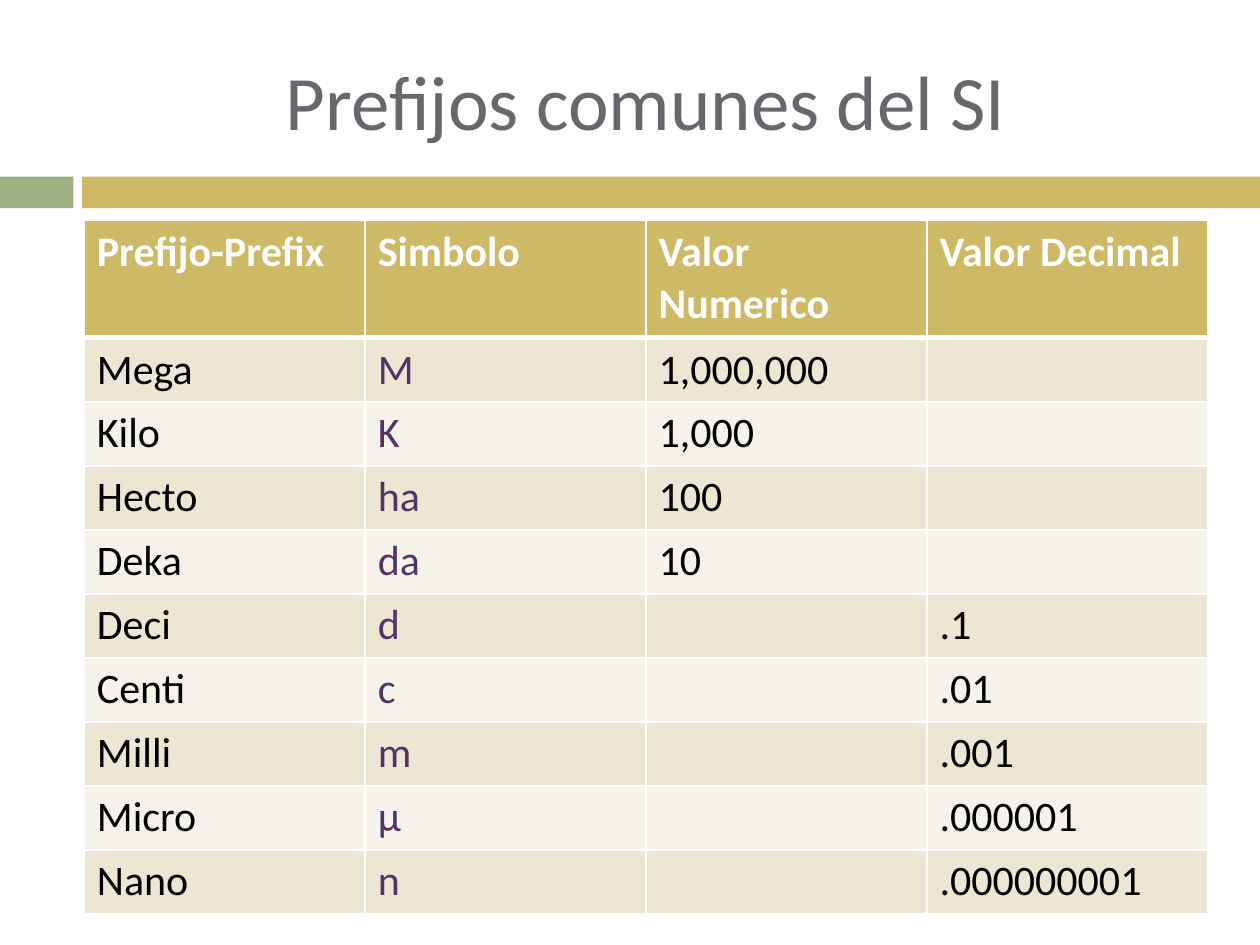
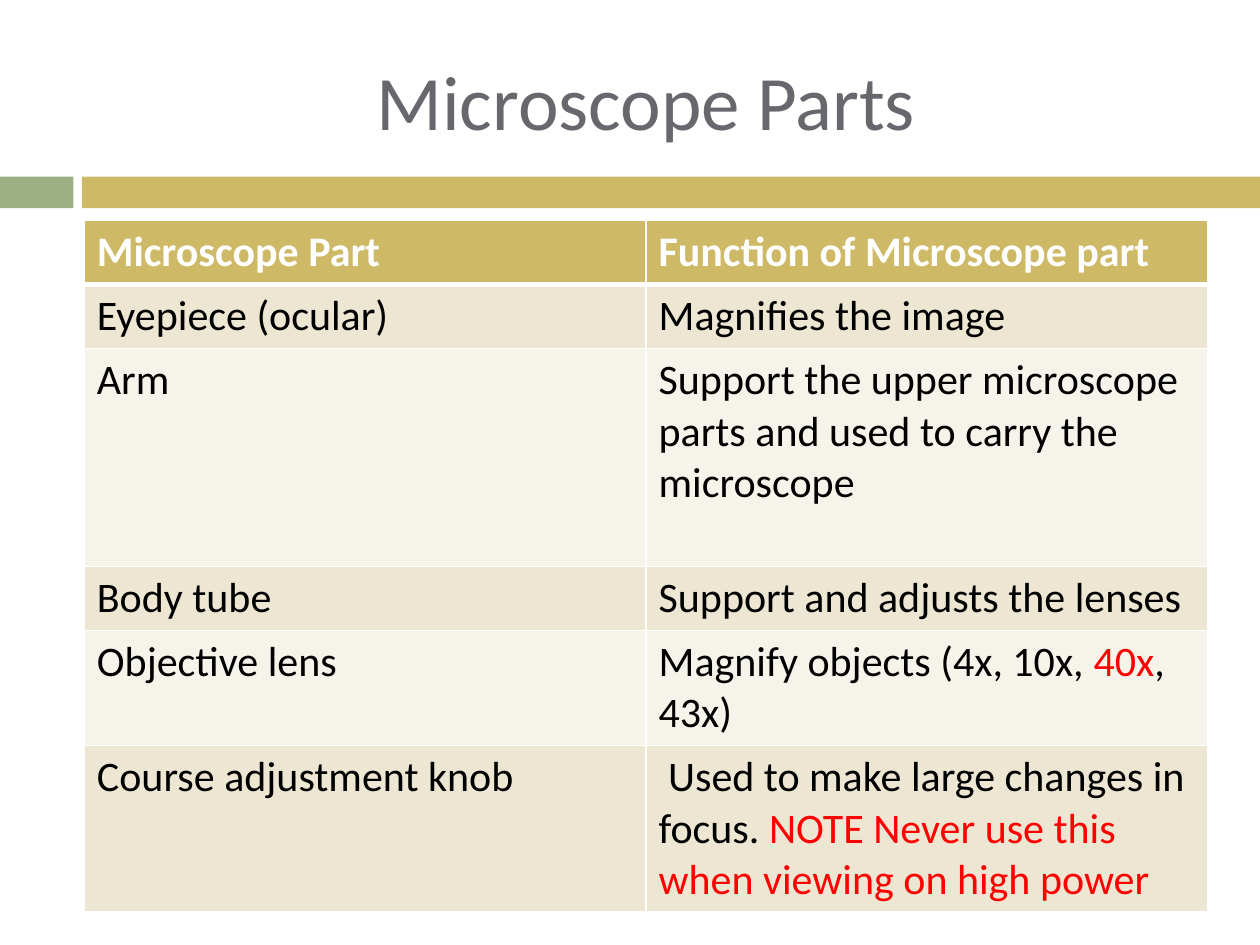
from lxml.etree import SubElement
from pptx import Presentation
from pptx.dml.color import RGBColor
from pptx.enum.shapes import MSO_SHAPE as Shape
from pptx.enum.text import MSO_ANCHOR as Anchor, MSO_AUTO_SIZE as AutoSize, PP_ALIGN as Align
from pptx.oxml.ns import qn
from pptx.util import Cm, Pt

TITLE_ONLY = 5
WHITE, BLACK, RED = "FFFFFF", "000000", "FF0000"
GOLD, SAGE, GREY, PURPLE = "CEB966", "9CB084", "69676D", "543466"
STRIPES = ("EDE6D3", "F6F3EA")

PREFIXES = [
    ("Prefijo-Prefix", "Simbolo", "Valor Numerico", "Valor Decimal"),
    ("Mega", "M", "1,000,000", ""),
    ("Kilo", "K", "1,000", ""),
    ("Hecto", "ha", "100", ""),
    ("Deka", "da", "10", ""),
    ("Deci", "d", "", ".1"),
    ("Centi", "c", "", ".01"),
    ("Milli", "m", "", ".001"),
    ("Micro", "µ", "", ".000001"),
    ("Nano", "n", "", ".000000001"),
]

# Text between bars is shown in red.
MICROSCOPE_PARTS = [
    ("Microscope Part", "Function of Microscope part"),
    ("Eyepiece (ocular)", "Magnifies the image"),
    ("Arm", "Support the upper microscope parts and used to carry the microscope"),
    ("Body tube", "Support and adjusts the lenses"),
    ("Objective lens", "Magnify objects (4x, 10x, |40x|, 43x)"),
    ("Course adjustment knob",
     " Used to make large changes in focus. |NOTE Never use this when viewing on high power"),
]


def color(hex_text):
    return RGBColor.from_string(hex_text)


class Pages:
    """Deck style together with the page being built."""
    font = "Calibri"
    left, width = 1.7, 22.65

    def __init__(self):
        self.deck = Presentation()
        self.deck.slide_width, self.deck.slide_height = Cm(25.4), Cm(19.05)
        self.page = None

    def start_page(self, title):
        self.page = self.deck.slides.add_slide(self.deck.slide_layouts[TITLE_ONLY])
        self.band(0, 1.48, SAGE)
        self.band(1.65, 23.75, GOLD)
        self.title(title)

    def band(self, left, width, fill):
        box = self.page.shapes.add_shape(
            Shape.RECTANGLE, Cm(left), Cm(3.56), Cm(width), Cm(0.64))
        box.shadow.inherit = False
        box.fill.solid()
        box.fill.fore_color.rgb = color(fill)
        box.line.fill.background()

    def title(self, text):
        box = self.page.shapes.title
        box.left, box.top = Cm(self.left), Cm(0.64)
        box.width, box.height = Cm(self.width), Cm(2.75)
        frame = box.text_frame
        frame.text = text
        frame.auto_size = AutoSize.NONE
        frame.vertical_anchor = Anchor.MIDDLE
        para = frame.paragraphs[0]
        para.alignment = Align.CENTER
        self.style(para.runs[0], 44, GREY)

    def style(self, span, size, ink, bold=False):
        span.font.name, span.font.size, span.font.bold = self.font, Pt(size), bold
        span.font.color.rgb = color(ink)

    def table(self, rows, heights, column_inks):
        """Add a striped table; heights are in centimetres, one per row."""
        columns = len(rows[0])
        table = self.page.shapes.add_table(
            len(rows), columns, Cm(self.left), Cm(4.45),
            Cm(self.width), Cm(sum(heights))).table
        for column in table.columns:
            column.width = Cm(self.width / columns)
        for row_index, texts in enumerate(rows):
            table.rows[row_index].height = Cm(heights[row_index])
            for column_index, text in enumerate(texts):
                self.cell(table.cell(row_index, column_index), text,
                          row_index, column_inks[column_index])

    def cell(self, cell, text, row_index, ink):
        header = row_index == 0
        self.borders(cell, top=3 if row_index == 1 else 1, bottom=3 if header else 1)
        cell.fill.solid()
        cell.fill.fore_color.rgb = color(GOLD if header else STRIPES[(row_index - 1) % 2])
        para = cell.text_frame.paragraphs[0]
        for part_index, part in enumerate(text.split("|")):
            if part:
                span = para.add_run()
                span.text = part
                part_ink = RED if part_index % 2 else ink
                self.style(span, 24, WHITE if header else part_ink, header)

    def borders(self, cell, top, bottom):
        properties = cell._tc.get_or_add_tcPr()
        for tag, points in (("lnL", 1), ("lnR", 1), ("lnT", top), ("lnB", bottom)):
            line = SubElement(properties, qn(f"a:{tag}"), w=str(Pt(points)))
            fill = SubElement(line, qn("a:solidFill"))
            SubElement(fill, qn("a:srgbClr"), val=WHITE)


def main():
    pages = Pages()
    pages.start_page("Prefijos comunes del SI")
    pages.table(PREFIXES, [2.36] + [1.29] * 9, (BLACK, PURPLE, BLACK, BLACK))

    pages.start_page("Microscope Parts")
    pages.table(MICROSCOPE_PARTS, [1.29, 1.29, 4.39, 1.29, 2.31, 3.35], (BLACK, BLACK))
    pages.deck.save("out.pptx")


if __name__ == "__main__":
    main()
